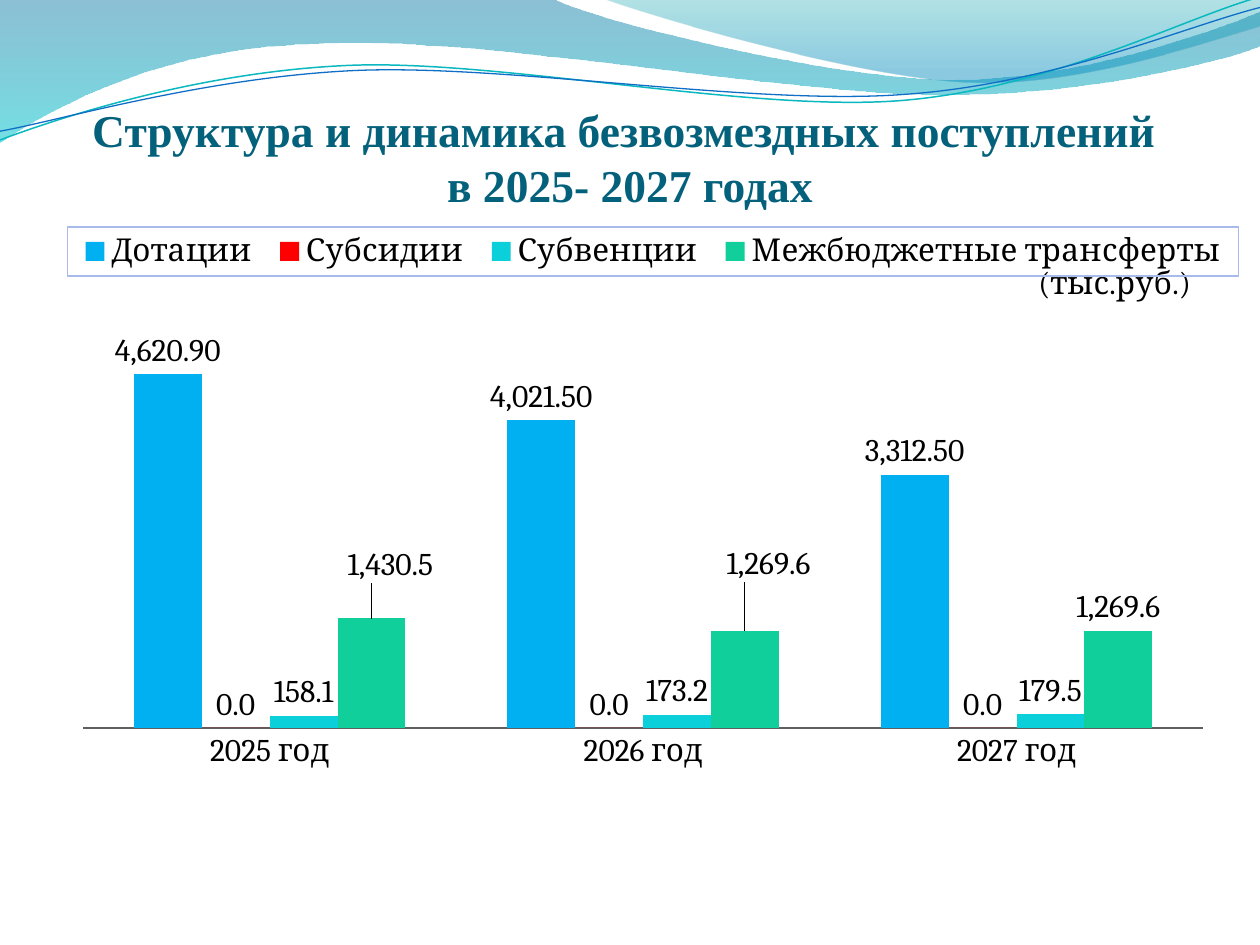
from dataclasses import dataclass
from typing import Optional

from lxml import etree
from pptx import Presentation
from pptx.chart.data import CategoryChartData
from pptx.dml.color import RGBColor
from pptx.enum.chart import XL_CHART_TYPE, XL_LABEL_POSITION as LabelPos
from pptx.enum.chart import XL_LEGEND_POSITION as LegendPos, XL_TICK_MARK as TickMark
from pptx.enum.text import MSO_ANCHOR, MSO_AUTO_SIZE, PP_ALIGN
from pptx.oxml import parse_xml
from pptx.oxml.ns import nsdecls, qn
from pptx.util import Pt

BLACK = RGBColor(0x00, 0x00, 0x00)
TEAL = RGBColor(0x04, 0x61, 0x7B)
AXIS_GREY = RGBColor(0x60, 0x60, 0x60)
LEGEND_BORDER = RGBColor(0xA8, 0xBA, 0xEA)
WAVE_CYAN = RGBColor(0x0A, 0xB8, 0xBF)
WAVE_BLUE = RGBColor(0x0F, 0x6F, 0xC6)
BLUE = RGBColor(0x00, 0xB0, 0xF0)
RED = RGBColor(0xFF, 0x00, 0x00)
AQUA = RGBColor(0x0B, 0xD0, 0xD9)
GREEN = RGBColor(0x10, 0xCF, 0x9B)


@dataclass
class GradientStop:
    position: int
    color: RGBColor
    opacity: int


@dataclass
class Wave:
    """Points in pt: a step of one point is straight, a step of three is a cubic curve."""
    start: tuple
    steps: list
    gradient: Optional[list] = None
    line_color: Optional[RGBColor] = None
    line_width: float = 0


@dataclass
class Series:
    name: str
    values: tuple
    color: RGBColor
    number_format: str = "#,##0.0"


WAVES = [
    Wave((-0.5, 0), [
        [(317, -0.5)],
        [(342.7, 12.2), (478, 45.4), (545.8, 45.4)],
        [(614, 45.4), (690, 18.7), (720, 6.5)],
        [(720.5, 26)],
        [(708, 31.7), (626, 54.7), (537, 54)],
        [(448, 54), (275, 20.2), (185, 24.5)],
        [(93, 26), (33, 59.8), (-0.5, 81.4)]],
        [GradientStop(0, RGBColor(0x00, 0x74, 0xA1), 45),
         GradientStop(100, RGBColor(0x00, 0xC6, 0xCF), 55)]),
    Wave((345, -0.5), [
        [(366.5, 8), (491, 44.6), (553.7, 46.8)],
        [(616, 49.7), (692, 23), (720, 15)],
        [(720, 0)]],
        [GradientStop(0, RGBColor(0x00, 0xA1, 0xA9), 30),
         GradientStop(80, RGBColor(0x00, 0x8B, 0xBF), 45)]),
    Wave((0, 80), [
        [(34.6, 67), (113.8, 41), (199.4, 37.4)],
        [(284.4, 33.8), (427, 64), (513.4, 57.6)],
        [(599.8, 51), (675.4, 10.8), (718.6, -1.4)]], None, WAVE_CYAN, 0.85),
    Wave((0, 75), [
        [(33.8, 69), (118, 44), (203.8, 40.3)],
        [(290, 36.7), (430, 60.5), (516.2, 54)],
        [(602, 48.2), (677.5, 15), (720, 4.3)]], None, WAVE_BLUE, 0.75),
]

YEARS = ["2025 год", "2026 год", "2027 год"]
INCOME = [
    Series("Дотации", (4620.9, 4021.5, 3312.5), BLUE, "#,##0.00"),
    Series("Субсидии", (0, 0, 0), RED),
    Series("Субвенции", (158.1, 173.2, 179.5), AQUA),
    Series("Межбюджетные трансферты", (1430.5, 1269.6, 1269.6), GREEN),
]
TRANSFER_LABEL_SHIFTS = [(0.016, -0.044), (0.02, -0.064)]
LABEL_EXTENSION = (
    f'<c:extLst {nsdecls("c")}><c:ext uri="{{CE6537A1-D6FC-4f65-9D91-7224C49458BB}}" '
    'xmlns:c15="http://schemas.microsoft.com/office/drawing/2012/chart">'
    '<c15:showLeaderLines val="0"/></c:ext></c:extLst>')


def gradient_fill(stops: list):
    stop_xml = "".join(
        f'<a:gs pos="{s.position * 1000}"><a:srgbClr val="{s.color}">'
        f'<a:alpha val="{s.opacity * 1000}"/></a:srgbClr></a:gs>' for s in stops)
    return parse_xml(f'<a:gradFill {nsdecls("a")} rotWithShape="1"><a:gsLst>{stop_xml}'
                     '</a:gsLst><a:lin ang="5400000" scaled="0"/></a:gradFill>')


def bend_segments(outline, steps: list) -> None:
    """Turn each run of three straight segments of a curved step into one cubic curve."""
    segments = iter(outline.findall(".//" + qn("a:lnTo")))
    for step in steps:
        first, *others = [next(segments) for _ in step]
        if others:
            curve = etree.Element(qn("a:cubicBezTo"))
            first.addprevious(curve)
            for segment in (first, *others):
                curve.append(segment[0])
                segment.getparent().remove(segment)


def draw_wave(slide, wave: Wave) -> None:
    builder = slide.shapes.build_freeform(Pt(wave.start[0]), Pt(wave.start[1]))
    builder.add_line_segments([(Pt(x), Pt(y)) for step in wave.steps for x, y in step],
                              close=wave.gradient is not None)
    shape = builder.convert_to_shape()
    shape.shadow.inherit = False
    outline = shape._element.spPr.find(qn("a:custGeom"))
    bend_segments(outline, wave.steps)
    if wave.gradient:
        shape.line.fill.background()
        outline.addnext(gradient_fill(wave.gradient))
    else:
        shape.fill.background()
        shape.line.color.rgb = wave.line_color
        shape.line.width = Pt(wave.line_width)


def set_layout(parent, index: int, inner: bool = False, edge: bool = True, **sizes) -> None:
    """Place a chart part by fractions of the chart, as child number index of parent."""
    for old in parent.findall(qn("c:layout")):
        parent.remove(old)
    layout = parse_xml(f'<c:layout {nsdecls("c")}><c:manualLayout/></c:layout>')
    settings = {"layoutTarget": "inner"} if inner else {}
    if edge:
        settings.update(xMode="edge", yMode="edge")
    for tag, value in {**settings, **sizes}.items():
        etree.SubElement(layout[0], qn(f"c:{tag}")).set("val", str(value))
    parent.insert(index, layout)


def format_font(font, size: float, color: RGBColor, name: str, bold: bool = False) -> None:
    font.size, font.name, font.bold = Pt(size), name, bold
    font.color.rgb = color


def add_title(slide) -> None:
    title = slide.shapes.title
    title.left, title.top, title.width, title.height = Pt(36), Pt(55.5), Pt(648), Pt(90)
    frame = title.text_frame
    frame.margin_left = frame.margin_right = frame.margin_bottom = 0
    frame.margin_top = Pt(3)
    frame.vertical_anchor = MSO_ANCHOR.TOP
    frame.word_wrap = True
    frame.auto_size = MSO_AUTO_SIZE.NONE
    frame.text = "Структура и динамика безвозмездных поступлений \vв 2025- 2027 годах"
    heading = frame.paragraphs[0]
    heading.alignment = PP_ALIGN.CENTER
    for run in heading.runs:
        format_font(run.font, 26, TEAL, "Times New Roman", bold=True)


def add_income_chart(slide) -> None:
    data = CategoryChartData()
    data.categories = YEARS
    for item in INCOME:
        data.add_series(item.name, item.values, item.number_format)
    chart = slide.shapes.add_chart(XL_CHART_TYPE.COLUMN_CLUSTERED, Pt(36), Pt(129.3),
                                   Pt(672.5), Pt(390), data).chart
    format_font(chart.font, 18, BLACK, "Cambria")

    chart.chart_title.text_frame.text = "(тыс.руб.)"
    unit = chart.chart_title.text_frame.paragraphs[0].runs[0]
    format_font(unit.font, 18, BLACK, "Cambria")
    set_layout(chart.chart_title._element, 1, x=0.824, y=0.043)

    chart.has_legend = True
    legend = chart.legend
    legend.position = LegendPos.TOP
    legend.include_in_layout = False
    format_font(legend.font, 18, BLACK, "Cambria")
    set_layout(legend._element, 1, x=0.004, y=0, w=0.995, h=0.072)
    legend._element.find(qn("c:overlay")).addnext(parse_xml(
        f'<c:spPr {nsdecls("c", "a")}><a:ln w="9525"><a:solidFill>'
        f'<a:srgbClr val="{LEGEND_BORDER}"/></a:solidFill></a:ln></c:spPr>'))

    plot = chart.plots[0]
    plot.gap_width, plot.overlap, plot.vary_by_categories = 150, 0, False
    set_layout(plot._element.getparent(), 0, inner=True, x=0.017, y=0.174, w=0.952, h=0.561)
    years, amounts = chart.category_axis, chart.value_axis
    years.major_tick_mark = TickMark.NONE
    years.format.line.color.rgb = AXIS_GREY
    amounts.has_major_gridlines = False
    amounts.minimum_scale, amounts.maximum_scale = 0, 5000
    amounts.visible = False

    for series, item in zip(plot.series, INCOME):
        series.format.fill.solid()
        series.format.fill.fore_color.rgb = item.color
        labels = series.data_labels
        labels.show_value = True
        labels.number_format, labels.number_format_is_linked = item.number_format, False
        labels.position = LabelPos.OUTSIDE_END
        format_font(labels.font, 18, BLACK, "Cambria")

    transfers = plot.series[-1]
    label_list = transfers.data_labels._element
    for index, (dx, dy) in enumerate(TRANSFER_LABEL_SHIFTS):
        label = transfers.points[index].data_label
        format_font(label.font, 18, BLACK, "Cambria")
        label.position = LabelPos.OUTSIDE_END
        set_layout(label_list[index], 1, edge=False, x=dx, y=dy)
    label_list.append(parse_xml(LABEL_EXTENSION))


def main() -> None:
    deck = Presentation()
    deck.slide_width, deck.slide_height = Pt(720), Pt(540)
    slide = deck.slides.add_slide(deck.slide_layouts[5])
    for wave in WAVES:
        draw_wave(slide, wave)
    add_title(slide)
    add_income_chart(slide)
    deck.save("out.pptx")


if __name__ == "__main__":
    main()
